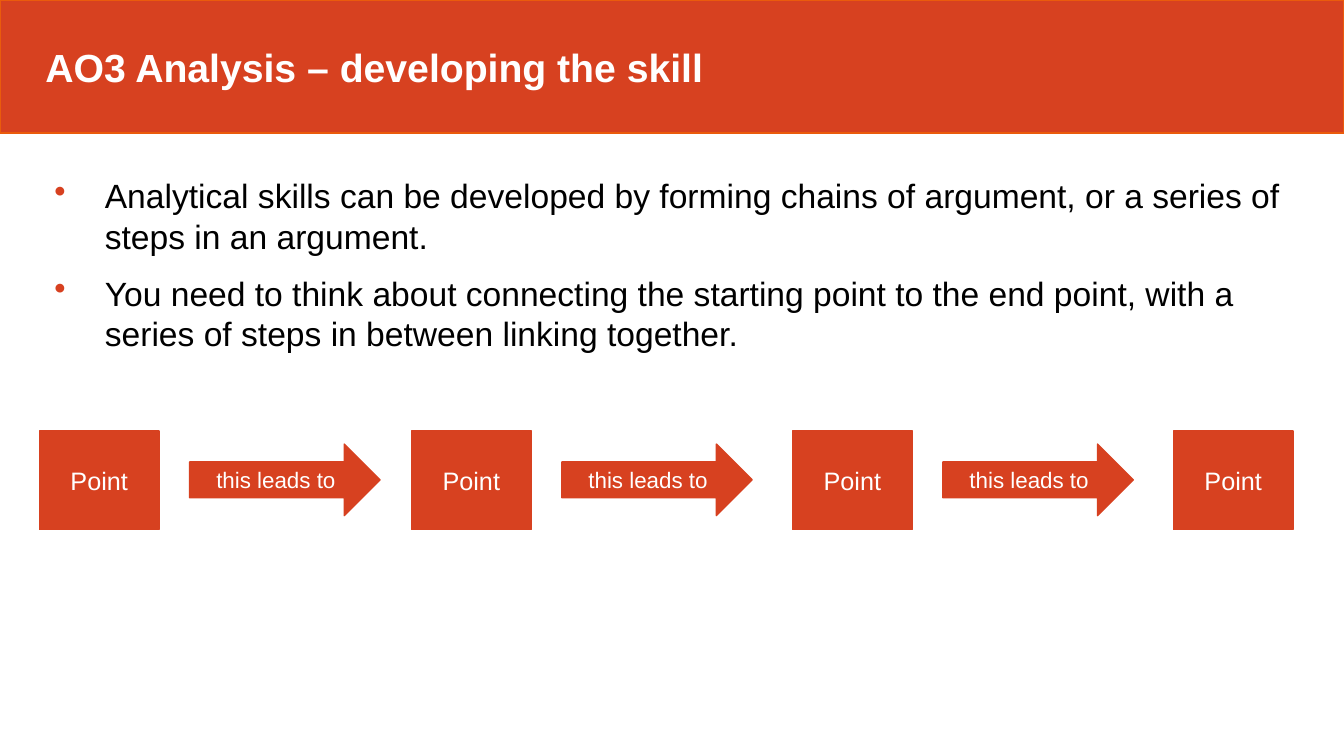
from lxml import etree
from pptx import Presentation
from pptx.dml.color import RGBColor
from pptx.enum import shapes, text
from pptx.oxml.ns import qn
from pptx.util import Pt

RED = RGBColor(0xD7, 0x41, 0x20)
ORANGE = RGBColor(0xEA, 0x5B, 0x0C)
WHITE = RGBColor(0xFF, 0xFF, 0xFF)
BLACK = RGBColor(0, 0, 0)


def set_text(tf, lines, size, color, align, left_margin=3.6):
    tf.word_wrap = True
    tf.margin_left = Pt(left_margin)
    tf.margin_right = tf.margin_top = tf.margin_bottom = Pt(3.6)
    tf.text = "\n".join(lines)
    for p in tf.paragraphs:
        p.alignment = align
        p.font.name = "Arial"
        p.font.size = Pt(size)
        p.font.color.rgb = color


def set_fill(sp, line_color):
    sp.fill.solid()
    sp.fill.fore_color.rgb = RED
    sp.line.color.rgb = line_color
    sp.line.width = Pt(1)


prs = Presentation()
prs.slide_width, prs.slide_height = Pt(960), Pt(540)
s = prs.slides.add_slide(prs.slide_layouts[5])

# Title band
title = s.shapes.title
title.left, title.top, title.width, title.height = Pt(0), Pt(0), Pt(960), Pt(95)
set_fill(title, ORANGE)
set_text(title.text_frame, ["AO3 Analysis – developing the skill"], 28, WHITE,
         text.PP_ALIGN.LEFT, left_margin=32.4)
title.text_frame.vertical_anchor = text.MSO_ANCHOR.MIDDLE
title.text_frame.paragraphs[0].font.bold = True

# Bulleted advice
advice = [
    "Analytical skills can be developed by forming chains of argument, "
    "or a series of steps in an argument.",
    "You need to think about connecting the starting point to the end point, "
    "with a series of steps in between linking together.",
]
body = s.shapes.add_textbox(Pt(35.3), Pt(121.7), Pt(907), Pt(170.6))
set_text(body.text_frame, advice, 24, BLACK, text.PP_ALIGN.LEFT)
for p in body.text_frame.paragraphs:
    p.space_before = Pt(12)
    pPr = p._p.get_or_add_pPr()
    pPr.set("marL", str(Pt(36)))
    pPr.set("indent", str(-Pt(36)))
    bullet_color = etree.Element(qn("a:buClr"))
    etree.SubElement(bullet_color, qn("a:srgbClr"), val=str(RED))
    bullet = etree.Element(qn("a:buChar"), char="•")
    pPr.find(qn("a:spcBef")).addnext(bullet_color)
    bullet_color.addnext(bullet)

# Chain of argument: points joined by block arrows
RECT = shapes.MSO_SHAPE.RECTANGLE
ARROW = shapes.MSO_SHAPE.RIGHT_ARROW
point_lefts = [28, 293.8, 566, 838]
chain = []
for left in point_lefts:
    chain.append((RECT, left, 307.8, 85.7, 70.6, "Point", 18))
    if left != point_lefts[-1]:
        chain.append((ARROW, left + 107.5, 317.2, 136, 51.1, "this leads to", 16))

for kind, left, top, width, height, label, size in chain:
    sp = s.shapes.add_shape(kind, Pt(left), Pt(top), Pt(width), Pt(height))
    sp.shadow.inherit = False
    set_fill(sp, RED)
    set_text(sp.text_frame, [label], size, WHITE, text.PP_ALIGN.CENTER)
    sp.text_frame.vertical_anchor = text.MSO_ANCHOR.MIDDLE

prs.save("out.pptx")
